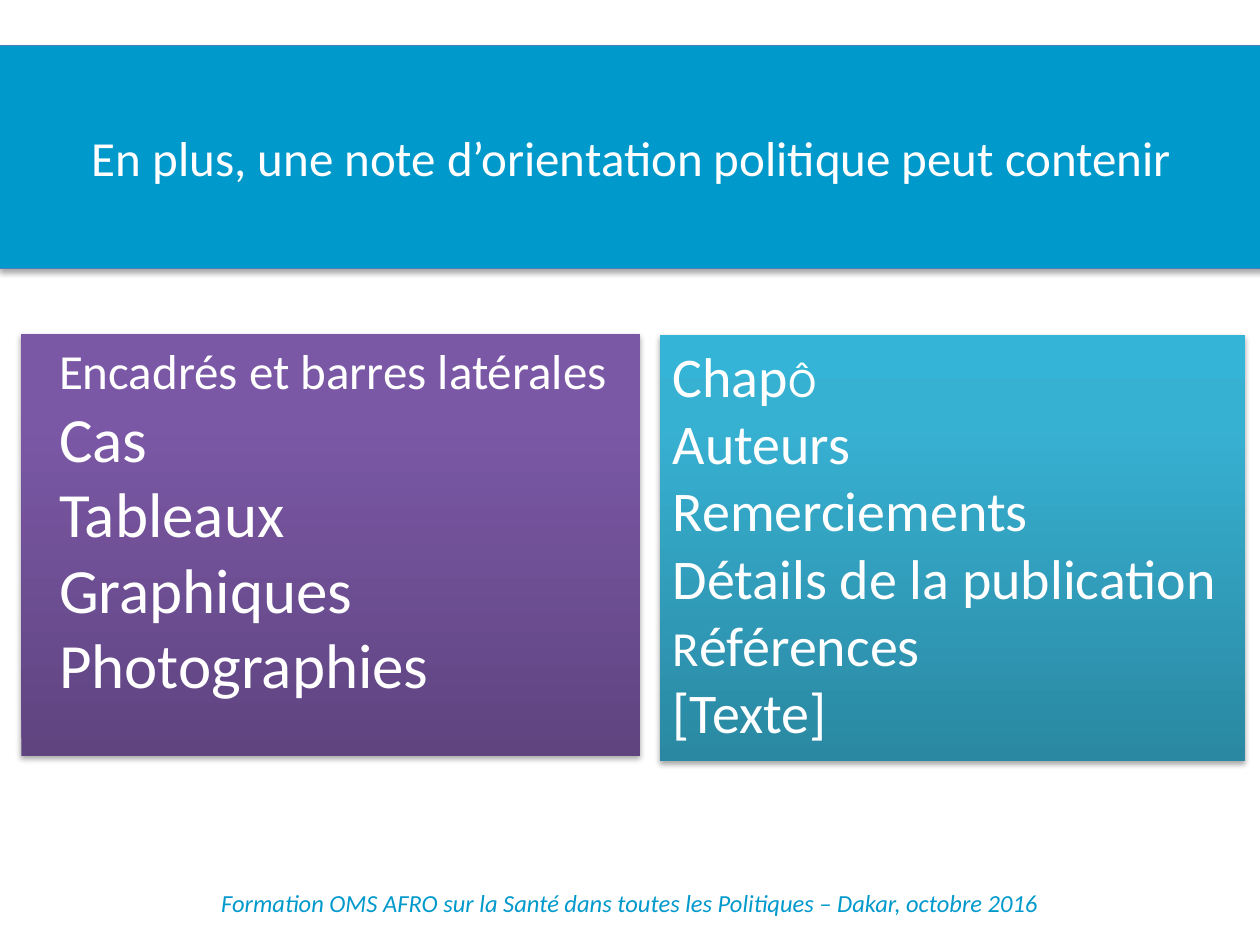
from dataclasses import dataclass
from copy import deepcopy
from pptx import Presentation
from pptx.dml.color import RGBColor as Rgb
from pptx.enum.text import MSO_ANCHOR as Anchor, MSO_AUTO_SIZE as Fit, PP_ALIGN as Align
from pptx.oxml import parse_xml
from pptx.oxml.ns import nsdecls
from pptx.util import Pt


@dataclass(frozen=True)
class Theme:
    font: str = "Calibri"
    blue: str = "0099CC"
    edge: str = "4B7EBC"
    white: str = "FFFFFF"
    purple: tuple = ((0, "5F4480"), (0.8, "7B58A6"), (1, "7C57A8"))
    teal: tuple = ((0, "2A88A2"), (0.8, "37B1D2"), (1, "34B4D6"))
    note: int = 14
    tiny: int = 24
    small: int = 28
    mid: int = 32
    big: int = 36


class Deck:
    def __init__(self, theme):
        self.theme = theme
        self.file = Presentation()
        self.file.slide_width, self.file.slide_height = Pt(720), Pt(540)
        self.slide = self.file.slides.add_slide(self.file.slide_layouts[3])

    def place(self, shape, box):
        shape.left, shape.top, shape.width, shape.height = map(Pt, box)

    def style(self, run, size, color):
        run.font.name = self.theme.font
        run.font.size = Pt(size)
        run.font.color.rgb = Rgb.from_string(color)

    def shade(self, shape):
        shape._element.spPr.append(parse_xml(
            f'<a:effectLst {nsdecls("a")}><a:outerShdw blurRad="{Pt(3.1)}" '
            f'dist="{Pt(1.8)}" dir="5400000" rotWithShape="0"><a:srgbClr val="000000">'
            '<a:alpha val="35000"/></a:srgbClr></a:outerShdw></a:effectLst>'))

    def banner(self, text, box):
        shape = self.slide.shapes.title
        self.place(shape, box)
        shape._element.spPr.append(parse_xml(
            f'<a:prstGeom {nsdecls("a")} prst="wave"><a:avLst>'
            '<a:gd name="adj1" fmla="val 12500"/><a:gd name="adj2" fmla="val 200"/>'
            '</a:avLst></a:prstGeom>'))
        shape.fill.solid()
        shape.fill.fore_color.rgb = Rgb.from_string(self.theme.blue)
        shape.line.color.rgb = Rgb.from_string(self.theme.edge)
        shape.line.width = Pt(0.75)
        self.shade(shape)
        frame = shape.text_frame
        frame.text = text
        frame.auto_size, frame.vertical_anchor = Fit.NONE, Anchor.MIDDLE
        frame.paragraphs[0].alignment = Align.CENTER
        self.style(frame.paragraphs[0].runs[0], self.theme.small, self.theme.white)

    def blend(self, shape, stops):
        shape.fill.gradient()
        shape.fill.gradient_angle = 90
        first = shape.fill.gradient_stops[0]._gs
        first.addnext(deepcopy(first))
        for stop, (spot, color) in zip(shape.fill.gradient_stops, stops):
            stop.position = spot
            stop.color.rgb = Rgb.from_string(color)

    def panel(self, index, box, stops, paras, indent=0, before=0, after=0):
        """Each paragraph is a list of lines, each line a list of (text, size)."""
        shape = self.slide.placeholders[index]
        self.place(shape, box)
        self.blend(shape, stops)
        self.shade(shape)
        frame = shape.text_frame
        frame.auto_size, frame.vertical_anchor = Fit.NONE, Anchor.TOP
        for at, lines in enumerate(paras):
            par = frame.add_paragraph() if at else frame.paragraphs[0]
            par.space_before, par.space_after = Pt(0 if at else before), Pt(after)
            props = par._p.get_or_add_pPr()
            props.set("marL", str(Pt(indent)))
            props.set("indent", "0")
            props.append(parse_xml(f'<a:buNone {nsdecls("a")}/>'))
            for row, line in enumerate(lines):
                if row:
                    par.add_line_break()
                for text, size in line:
                    run = par.add_run()
                    run.text = text
                    self.style(run, size, self.theme.white)

    def footer(self, text, box):
        frame = self.slide.shapes.add_textbox(*map(Pt, box)).text_frame
        frame.word_wrap = True
        frame.text = text
        par = frame.paragraphs[0]
        par.alignment = Align.CENTER
        self.style(par.runs[0], self.theme.note, self.theme.blue)
        par.runs[0].font.italic = True


def main():
    look = Theme()
    deck = Deck(look)

    # Title on the wave
    deck.banner("En plus, une note d’orientation politique peut contenir",
                (-0.7, 26, 723, 127.4))

    # Left panel: added content
    items = ["Cas", "Tableaux", "Graphiques", "Photographies"]
    left = [[("Encadrés et barres latérales", look.small)]]
    left += [[(item, look.big)] for item in items]
    deck.panel(1, (12.2, 190.8, 353.5, 241.2), look.purple, [left], indent=14.4, after=6)

    # Right panel: publication details
    right = [[("Chap", look.mid), ("Ô", look.tiny)]]
    right += [[(item, look.mid)]
              for item in ("Auteurs", "Remerciements", "Détails de la publication")]
    right.append([("R", look.small), ("éférences", look.mid)])
    last = [[("[Texte]", look.mid)]]
    deck.panel(2, (377.2, 191.5, 334.5, 243.6), look.teal, [right, last], before=18)

    # Footer line
    deck.footer("Formation OMS AFRO sur la Santé dans toutes les Politiques"
                " – Dakar, octobre 2016", (0, 504, 720, 24.5))

    deck.file.save("out.pptx")


if __name__ == "__main__":
    main()
